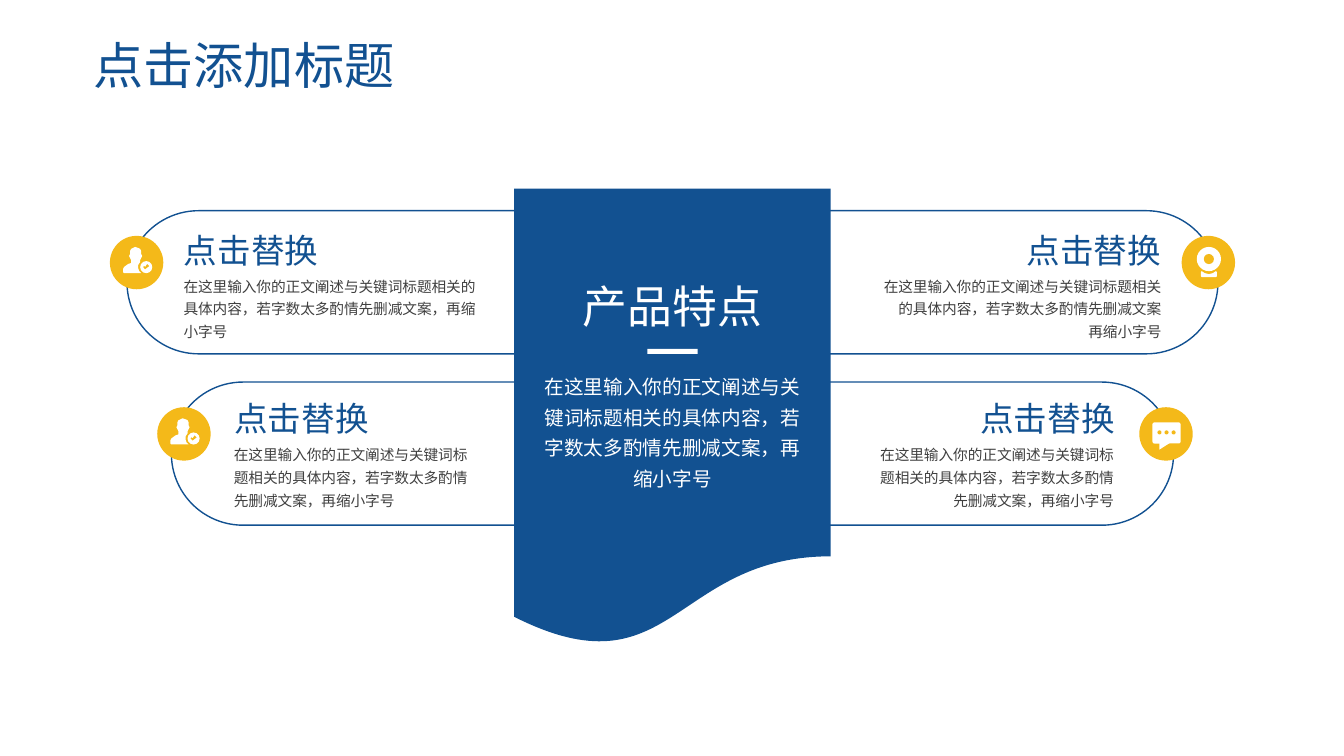
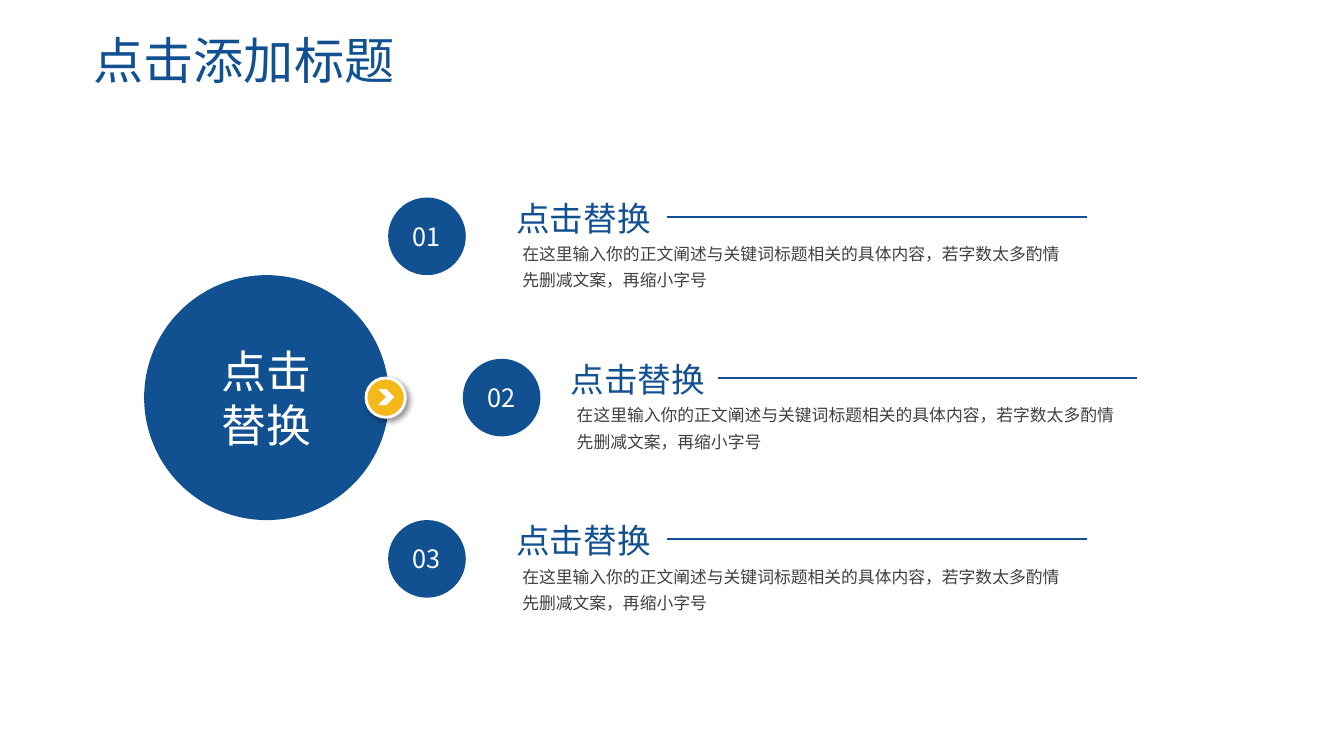
"""Build two slides: product features around a panel, and three numbered points."""
from dataclasses import dataclass
from typing import Callable

from lxml import etree
from pptx import Presentation
from pptx.dml.color import RGBColor
from pptx.enum.shapes import MSO_CONNECTOR, MSO_SHAPE
from pptx.enum.text import MSO_ANCHOR, MSO_AUTO_SIZE, PP_ALIGN
from pptx.oxml.ns import qn
from pptx.util import Inches, Pt

COLORS = {"blue": "125191", "gold": "F4B919", "gray": "404040", "white": "FFFFFF"}
FONT = "Noto Sans CJK SC"
LEFT, CENTER, RIGHT = PP_ALIGN.LEFT, PP_ALIGN.CENTER, PP_ALIGN.RIGHT
TOP, MIDDLE = MSO_ANCHOR.TOP, MSO_ANCHOR.MIDDLE
OVAL, RECT, ROUNDED = MSO_SHAPE.OVAL, MSO_SHAPE.RECTANGLE, MSO_SHAPE.ROUNDED_RECTANGLE
DOCUMENT, CHEVRON = MSO_SHAPE.FLOWCHART_DOCUMENT, MSO_SHAPE.CHEVRON
STRAIGHT = MSO_CONNECTOR.STRAIGHT
NO_FIT, GROW = MSO_AUTO_SIZE.NONE, MSO_AUTO_SIZE.SHAPE_TO_FIT_TEXT

TITLE = "点击添加标题"
HEADING = "点击替换"
BODY = "在这里输入你的正文阐述与关键词标题相关的具体内容，若字数太多酌情先删减文案，再缩小字号"
BODY_SPLIT = BODY.replace("，再", "\n再")

PERSON = [(12, 0), (15, 1), (17, 2), (18, 4), (18, 7), (19, 9), (18, 11), (17, 13),
          (17, 15), (15, 18), (15, 21), (16, 24), (18, 26), (1, 26), (0, 25), (0, 22),
          (1, 20), (5, 17), (8, 16), (8, 13), (7, 11), (6, 9), (7, 7), (7, 4), (8, 2),
          (10, 1)]
CHECK = [(24, 17), (22, 20), (21, 19), (20, 20), (22, 22), (26, 19)]
CHAT_TAIL = [(7, 20), (7, 27), (18, 20)]
CAMERA_BASE = [(5, 24), (8, 26), (12, 27), (16, 26), (19, 24), (20, 25), (20, 29),
               (19, 30), (5, 30), (4, 29), (4, 25)]


@dataclass
class Card:
    left: float
    top: float
    icon_left: float
    text_left: float
    text_top: float
    text_width: float
    heading_left: float
    align: PP_ALIGN
    body: str
    draw_icon: Callable


@dataclass
class Point:
    number: str
    circle_left: float
    text_left: float
    line_left: float
    top: float


def rgb(name: str) -> RGBColor:
    return RGBColor.from_string(COLORS[name])


def write(frame, text: str, size: float, color: str, align=LEFT, spacing=None, anchor=TOP):
    frame.text = text
    frame.vertical_anchor = anchor
    for paragraph in frame.paragraphs:
        paragraph.alignment = align
        paragraph.line_spacing = spacing
        for run in paragraph.runs:
            run.font.name = FONT
            run.font.size = Pt(size)
            run.font.color.rgb = rgb(color)
            east_asian = etree.SubElement(run.font._element, qn("a:ea"))
            east_asian.set("typeface", FONT)


def add_text(slide, left: float, top: float, width: float, height: float, text: str,
             size: float, color: str, align=LEFT, spacing=None):
    frame = slide.shapes.add_textbox(
        Inches(left), Inches(top), Inches(width), Inches(height)).text_frame
    frame.margin_left = frame.margin_right = frame.margin_top = frame.margin_bottom = 0
    frame.word_wrap = True
    frame.auto_size = GROW
    write(frame, text, size, color, align, spacing)


def paint(shape, fill: str, line=None, line_width=1.0):
    shape.shadow.inherit = False
    shape.fill.solid()
    shape.fill.fore_color.rgb = rgb(fill)
    if line:
        shape.line.color.rgb = rgb(line)
        shape.line.width = Pt(line_width)
    else:
        shape.line.fill.background()


def add_shape(slide, kind, left: float, top: float, width: float, height: float,
              fill: str, line=None, line_width=1.0):
    shape = slide.shapes.add_shape(
        kind, Inches(left), Inches(top), Inches(width), Inches(height))
    paint(shape, fill, line, line_width)
    return shape


def add_outline(slide, left: float, top: float, points: list, fill: str):
    builder = slide.shapes.build_freeform(*points[0], scale=Inches(0.01))
    builder.add_line_segments(points[1:], close=True)
    paint(builder.convert_to_shape(Inches(left), Inches(top)), fill)


def draw_person(slide, left: float, top: float):
    x, y = left + 0.13, top + 0.11
    add_outline(slide, x, y, PERSON, "white")
    add_shape(slide, OVAL, x + 0.16, y + 0.13, 0.14, 0.14, "gold")
    add_shape(slide, OVAL, x + 0.17, y + 0.14, 0.12, 0.12, "white")
    add_outline(slide, x, y, CHECK, "gold")


def draw_camera(slide, left: float, top: float):
    x, y = left + 0.15, top + 0.11
    add_shape(slide, OVAL, x, y, 0.24, 0.24, "white")
    add_shape(slide, OVAL, x + 0.07, y + 0.07, 0.1, 0.1, "gold")
    add_outline(slide, x, y, CAMERA_BASE, "white")


def draw_chat(slide, left: float, top: float):
    x, y = left + 0.13, top + 0.15
    add_shape(slide, ROUNDED, x, y, 0.28, 0.21, "white").adjustments[0] = 0.1
    add_outline(slide, x, y, CHAT_TAIL, "white")
    for step in range(3):
        add_shape(slide, OVAL, x + 0.05 + step * 0.07, y + 0.08, 0.04, 0.04, "gold")


def draw_card(slide, card: Card):
    frame = add_shape(slide, ROUNDED, card.left, card.top, 4.74, 1.42, "white", "blue")
    frame.adjustments[0] = 0.5
    icon_top = card.top + 0.25
    add_shape(slide, OVAL, card.icon_left, icon_top, 0.53, 0.53, "gold")
    card.draw_icon(slide, card.icon_left, icon_top)
    add_text(slide, card.heading_left, card.text_top, 1.4, 0.4, HEADING, 24, "blue", CENTER)
    add_text(slide, card.text_left, card.text_top + 0.42, card.text_width, 0.67, card.body,
             10.5, "gray", card.align, 1.3)


def draw_point(slide, point: Point):
    circle = add_shape(slide, OVAL, point.circle_left, point.top, 0.77, 0.77, "blue")
    write(circle.text_frame, point.number, 18, "white", CENTER, anchor=MIDDLE)
    add_text(slide, point.text_left, point.top, 1.73, 0.4, HEADING, 24, "blue")
    add_text(slide, point.text_left + 0.06, point.top + 0.4, 5.45, 0.5, BODY, 12, "gray",
             spacing=1.3)
    line_top = Inches(point.top + 0.19)
    rule = slide.shapes.add_connector(
        STRAIGHT, Inches(point.line_left), line_top, Inches(point.line_left + 4.16), line_top)
    rule.line.color.rgb = rgb("blue")
    rule.line.width = Pt(1.25)
    etree.SubElement(rule._element.spPr, qn("a:effectLst"))


def add_drop_shadow(shape):
    effects = shape._element.spPr.find(qn("a:effectLst"))
    shadow = etree.SubElement(effects, qn("a:outerShdw"), blurRad=str(Pt(4)),
                              dist=str(Pt(3)), dir="2700000", algn="tl", rotWithShape="0")
    black = etree.SubElement(shadow, qn("a:srgbClr"), val="000000")
    etree.SubElement(black, qn("a:alpha"), val="40000")


def new_slide(deck, title_top: float):
    slide = deck.slides.add_slide(deck.slide_layouts[5])
    title = slide.shapes.title
    title.left, title.top = Inches(0.83), Inches(title_top)
    title.width, title.height = Inches(11.5), Inches(0.5)
    title.text_frame.auto_size = NO_FIT
    write(title.text_frame, TITLE, 35.8, "blue", LEFT, 0.9)
    return slide


def build_features(deck):
    slide = new_slide(deck, 0.36)
    cards = [
        Card(7.34, 2.09, 11.72, 8.69, 2.28, 2.83, 10.15, RIGHT, BODY_SPLIT, draw_camera),
        Card(6.9, 3.79, 11.3, 8.69, 3.95, 2.36, 9.69, RIGHT, BODY, draw_chat),
        Card(1.26, 2.09, 1.09, 1.82, 2.28, 2.91, 1.79, LEFT, BODY, draw_person),
        Card(1.7, 3.79, 1.56, 2.32, 3.95, 2.44, 2.29, LEFT, BODY, draw_person),
    ]
    for card in cards:
        draw_card(slide, card)
    add_shape(slide, DOCUMENT, 5.1, 1.87, 3.14, 4.55, "blue")
    add_text(slide, 5.67, 2.77, 2, 0.54, "产品特点", 32, "white", CENTER)
    add_shape(slide, RECT, 6.42, 3.46, 0.5, 0.05, "white")
    add_text(slide, 5.32, 3.65, 2.7, 1.2, BODY, 14, "white", CENTER, 1.3)


def build_points(deck):
    slide = new_slide(deck, 0.31)
    hub = add_shape(slide, OVAL, 1.43, 2.73, 2.43, 2.43, "blue")
    write(hub.text_frame, "点击\n替换", 32, "white", CENTER, anchor=MIDDLE)
    places = [(3.85, 5.12, 6.62), (4.59, 5.66, 7.12), (3.85, 5.12, 6.62)]
    for index, place in enumerate(places):
        draw_point(slide, Point(f"{index + 1:02}", *place, 1.96 + index * 1.6))
    badge = add_shape(slide, OVAL, 3.63, 3.75, 0.39, 0.39, "gold", "white", 2)
    add_drop_shadow(badge)
    add_shape(slide, CHEVRON, 3.75, 3.86, 0.16, 0.16, "white")


def main():
    deck = Presentation()
    deck.slide_width, deck.slide_height = Inches(13.33), Inches(7.5)
    build_features(deck)
    build_points(deck)
    deck.save("out.pptx")


if __name__ == "__main__":
    main()
